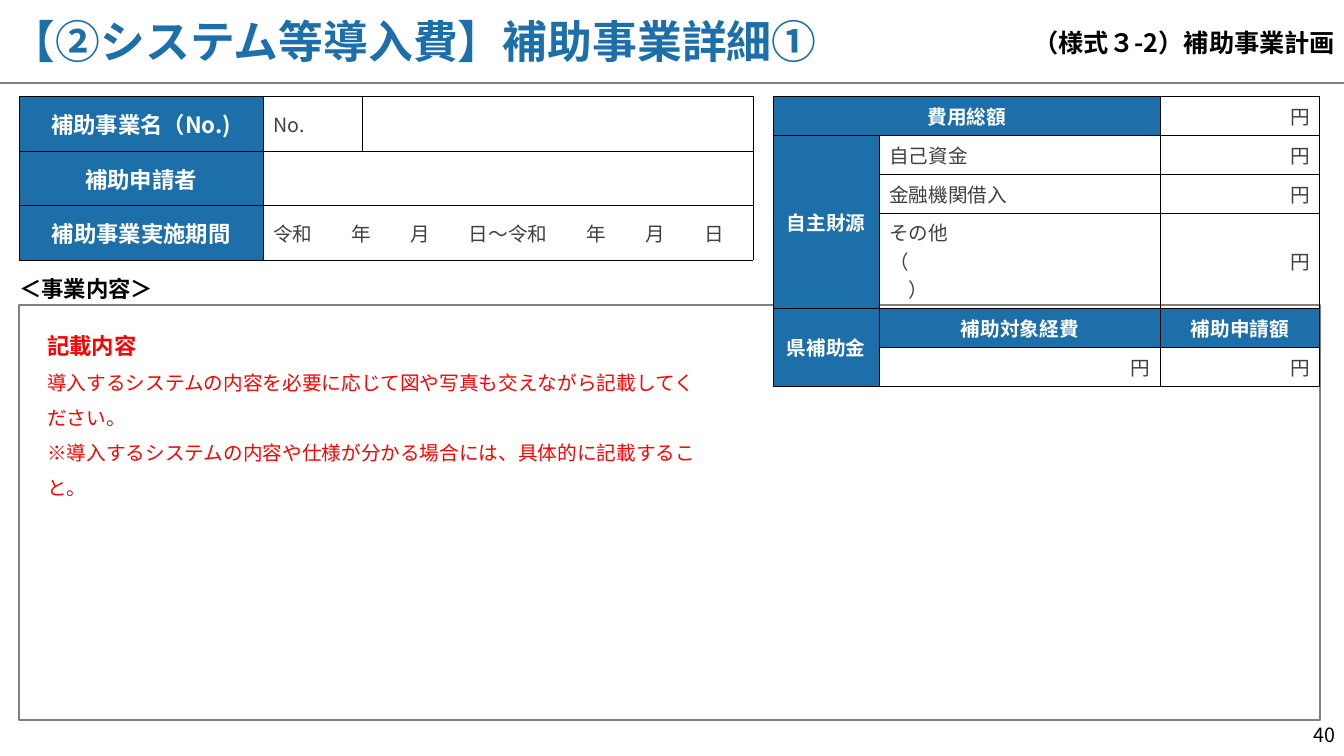
import pptx
import pptx.util
import pptx.dml.color
import pptx.enum.text
import pptx.enum.shapes
import pptx.oxml
import pptx.oxml.ns
from lxml import etree

Inches = pptx.util.Inches
Pt = pptx.util.Pt
ALIGN = pptx.enum.text.PP_ALIGN
ANCHOR = pptx.enum.text.MSO_ANCHOR
qn = pptx.oxml.ns.qn
FONT = "Noto Sans CJK JP"
COLORS = {
    "blue": "1D6FA9", "black": "000000", "white": "FFFFFF",
    "dark": "404040", "gray": "808080", "red": "FF0000",
}
SIDES = {"l": ALIGN.LEFT, "c": ALIGN.CENTER, "r": ALIGN.RIGHT}


def color(name):
    return pptx.dml.color.RGBColor.from_string(COLORS[name])


def write(para, text, size=14, hue="black", bold=False, align="l", space=None, tabs=()):
    para.alignment = SIDES[align]
    if space:
        para.line_spacing = space
    if tabs:
        stops = etree.SubElement(para._p.get_or_add_pPr(), qn("a:tabLst"))
        for stop in tabs:
            etree.SubElement(stops, qn("a:tab"), pos=str(Inches(stop)), algn="l")
    para.text = text
    for run in para.runs:
        run.font.name = FONT
        run.font.size = Pt(size)
        run.font.bold = bold
        run.font.color.rgb = color(hue)
        etree.SubElement(run._r.get_or_add_rPr(), qn("a:ea"), typeface=FONT)


def add_text(slide, area, lines, inset=(0.1, 0.05), anchor=ANCHOR.TOP):
    frame = slide.shapes.add_textbox(*map(Inches, area)).text_frame
    frame.word_wrap = True
    frame.vertical_anchor = anchor
    frame.margin_left = frame.margin_right = Inches(inset[0])
    frame.margin_top = frame.margin_bottom = Inches(inset[1])
    for index, (text, style) in enumerate(lines):
        para = frame.add_paragraph() if index else frame.paragraphs[0]
        write(para, text, **style)


def add_line(slide, start, end):
    line = slide.shapes.add_connector(
        pptx.enum.shapes.MSO_CONNECTOR.STRAIGHT, *map(Inches, start + end))
    line.line.color.rgb = color("gray")
    line.line.width = Pt(1.5)
    etree.SubElement(line._element.spPr, qn("a:effectLst"))


def add_frame(slide, area):
    box = slide.shapes.add_shape(
        pptx.enum.shapes.MSO_SHAPE.RECTANGLE, *map(Inches, area))
    box.shadow.inherit = False
    box.fill.background()
    box.line.color.rgb = color("gray")
    box.line.width = Pt(1.5)


def add_border(cell):
    props = cell._tc.get_or_add_tcPr()
    for index, side in enumerate(("lnL", "lnR", "lnT", "lnB")):
        edge = etree.Element(qn("a:" + side), w=str(Pt(0.5)))
        fill = etree.SubElement(edge, qn("a:solidFill"))
        etree.SubElement(fill, qn("a:srgbClr"), val=COLORS["black"])
        props.insert(index, edge)


def add_grid(slide, spot, widths, heights, merges, cells):
    size = (sum(widths), sum(heights))
    grid = slide.shapes.add_table(
        len(heights), len(widths), *map(Inches, spot + size)).table
    grid.first_row = grid.horz_banding = False
    for column, width in zip(grid.columns, widths):
        column.width = Inches(width)
    for row, height in zip(grid.rows, heights):
        row.height = Inches(height)
    for first, last in merges:
        grid.cell(*first).merge(grid.cell(*last))
    for row in range(len(heights)):
        for col in range(len(widths)):
            cell = grid.cell(row, col)
            text, style = cells.get((row, col), ("", {}))
            cell.vertical_anchor = ANCHOR.MIDDLE
            if style.get("hue") == "white":
                cell.fill.solid()
                cell.fill.fore_color.rgb = color("blue")
            else:
                cell.fill.background()
            add_border(cell)
            if text:
                write(cell.text_frame.paragraphs[0], text, **style)


def main():
    deck = pptx.Presentation()
    deck.slide_width, deck.slide_height = Inches(13.33), Inches(7.5)
    slide = deck.slides.add_slide(deck.slide_layouts[6])

    add_line(slide, (0, 0.82), (13.33, 0.82))
    add_text(slide, (12.67, 7.12, 0.67, 0.38), [("40", dict(align="r"))])
    add_frame(slide, (0.19, 3.03, 12.9, 4.11))
    add_text(slide, (0.19, 2.6, 3.04, 0.56),
             [("＜事業内容＞", dict(size=16, bold=True, space=1.5))], (0, 0))
    add_text(slide, (8.28, 0.09, 5.06, 0.66),
             [("（様式３-2）補助事業計画", dict(size=18, bold=True, align="r"))],
             (0.1, 0.04), ANCHOR.MIDDLE)

    head = dict(hue="white", bold=True, align="c")
    label = dict(head, size=16)
    body = dict(hue="dark")
    yen = ("円", dict(body, align="r"))
    dates = dict(body, tabs=(0.78, 1.36, 1.94, 3.11, 3.69, 4.28))
    add_grid(slide, (0.19, 0.96), (2.42, 0.98, 3.88), [0.54] * 3,
             [((1, 1), (1, 2)), ((2, 1), (2, 2))], {
                 (0, 0): ("補助事業名（No.)", label),
                 (0, 1): ("No.", body),
                 (1, 0): ("補助申請者", label),
                 (2, 0): ("補助事業実施期間", label),
                 (2, 1): ("令和\t年\t月\t日～令和\t年\t月\t日", dates),
             })
    costs = {
        (0, 0): ("費用総額", head),
        (1, 0): ("自主財源", head),
        (1, 1): ("自己資金", body),
        (2, 1): ("金融機関借入", body),
        (3, 1): ("その他\v（\v　）", body),
        (4, 0): ("県補助金", head),
        (4, 1): ("補助対象経費", head),
        (4, 2): ("補助申請額", head),
        (5, 1): yen,
    }
    costs.update({(row, 2): yen for row in (0, 1, 2, 3, 5)})
    total, tall = 2.87, 0.95
    short = (total - tall) / 5
    add_grid(slide, (7.67, 0.96), (1.05, 2.79, 1.58),
             [short] * 3 + [tall] + [short] * 2,
             [((0, 0), (0, 1)), ((1, 0), (3, 0)), ((4, 0), (5, 0))], costs)

    add_text(slide, (0.01, 0, 10.59, 0.8),
             [("【②システム等導入費】補助事業詳細①", dict(size=32, hue="blue", bold=True))],
             anchor=ANCHOR.MIDDLE)
    note = dict(hue="red", space=1.5)
    add_text(slide, (0.47, 3.16, 6.5, 2.34), [
        ("記載内容", dict(note, size=16, bold=True)),
        ("導入するシステムの内容を必要に応じて図や写真も交えながら記載してください。", note),
        ("※導入するシステムの内容や仕様が分かる場合には、具体的に記載すること。", note),
    ], (0, 0))
    deck.save("out.pptx")


if __name__ == "__main__":
    main()
